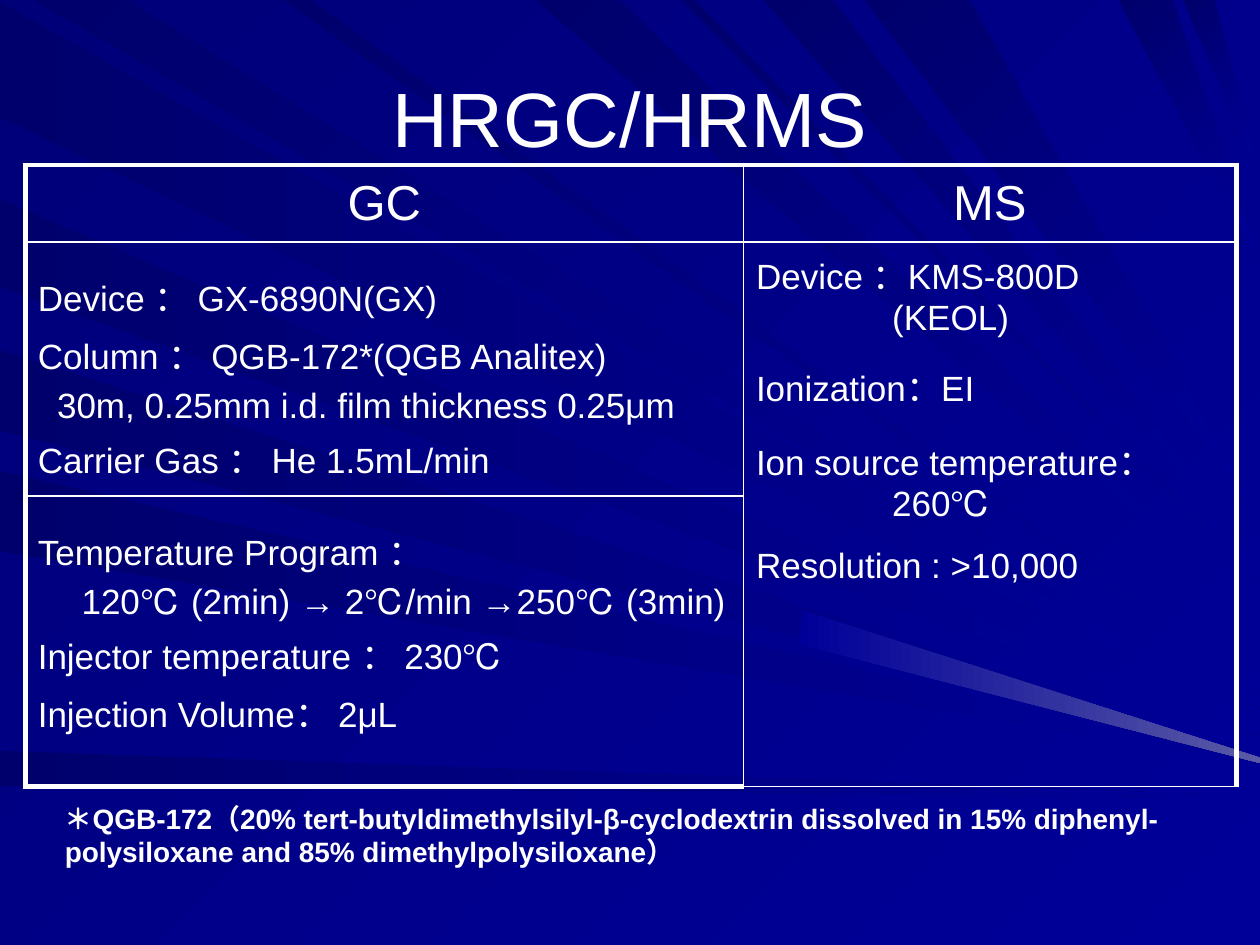
import pptx
import pptx.dml.color
import pptx.enum.text
import pptx.oxml.ns
import pptx.util
from dataclasses import dataclass
from lxml import etree

Pt = pptx.util.Pt
RGB = pptx.dml.color.RGBColor.from_string
ALIGN = pptx.enum.text.PP_ALIGN
ANCHOR = pptx.enum.text.MSO_ANCHOR


@dataclass(frozen=True)
class Theme:
    font: str = "Arial"
    ink: str = "FFFFFF"
    back: tuple = ("000078", "000099")
    ray: tuple = ("00006D", "000099")
    glow: tuple = ("000099", "5A5AA6")
    title: int = 44
    head: int = 28
    body: int = 20
    note: int = 16
    thick: int = 3
    thin: int = 1


T = Theme()

# start and end on the slide's edge, height of the tip on the right edge
TOP_RAYS = [(19, 73, 405), (162, 178, 396), (306, 354, 355), (389, 397, 333),
            (436, 476, 321), (494, 554, 295), (639, 670, 150), (676, 694, 100)]
LEFT_RAYS = [(1, 67, 410), (114, 164, 421), (200, 246, 431), (269, 315, 436),
             (429, 449, 455)]

HANG = {"left": 13.7, "first": -13.7, "before": 4}
SPEC = {"left": 77.8, "first": -77.8, "before": 13}
FLAT = {"before": 4}
OVEN = [
    ("Device ： GX-6890N(GX)", HANG),
    ("Column ： QGB-172*(QGB Analitex)", HANG),
    ("30m, 0.25mm i.d. film thickness 0.25μm", {"left": 11, "before": 4}),
    ("Carrier Gas ： He 1.5mL/min", HANG),
]
PROGRAM = [
    ("Temperature Program ：", FLAT),
    ("120℃ (2min) → 2℃/min →250℃ (3min)", {"left": 25, "before": 4}),
    ("Injector temperature ： 230℃", FLAT),
    ("Injection Volume： 2μL", FLAT),
]
DETECTOR = [
    ("Device ：KMS-800D\v(KEOL)", {**SPEC, "before": 4}),
    ("Ionization：EI", SPEC),
    ("Ion source temperature：260℃", SPEC),
    ("Resolution : >10,000", SPEC),
]


def put(obj, values):
    for name, value in values.items():
        setattr(obj, name, value)


def place(sp, box):
    put(sp, dict(zip(("left", "top", "width", "height"), map(Pt, box))))


def gradient(fill, colours, angle):
    fill.gradient()
    fill.gradient_angle = -angle % 360
    for stop, colour in zip(fill.gradient_stops, colours):
        stop.color.rgb = RGB(colour)


def write(tf, lines, size, align=ALIGN.LEFT, bold=False):
    for i, (text, fmt) in enumerate(lines):
        p = tf.paragraphs[0] if i == 0 else tf.add_paragraph()
        p.text = text
        put(p, {"alignment": align, "space_before": Pt(fmt.get("before", 0))})
        pPr = p._p.get_or_add_pPr()
        pPr.set("marL", str(Pt(fmt.get("left", 0))))
        pPr.set("indent", str(Pt(fmt.get("first", 0))))
        for r in p.runs:
            put(r.font, {"name": T.font, "size": Pt(size), "bold": bold})
            r.font.color.rgb = RGB(T.ink)


def ray(s, box, corners, colours, angle):
    fb = s.shapes.build_freeform(*corners[0], scale=Pt(1))
    fb.add_line_segments(corners[1:], close=True)
    sp = fb.convert_to_shape(Pt(box[0]), Pt(box[1]))
    sp.shadow.inherit = False
    sp.line.fill.background()
    gradient(sp.fill, colours, angle)


def backdrop(s, box):
    right = box[2]
    gradient(s.background.fill, T.back, 45)
    for start, end, tip in LEFT_RAYS:
        ray(s, box, [(0, start), (0, end), (right, tip)], T.ray, 0)
    for start, end, tip in TOP_RAYS:
        ray(s, box, [(start, 0), (end, 0), (right, tip)], T.ray, 45)
    ray(s, box, [(459, 349), (456, 368), (right, 436), (right, 433)], T.glow, 0)


def heading(s, box, text):
    sp = s.shapes.title
    place(sp, box)
    s.shapes._spTree.append(sp._element)
    sp.text_frame.vertical_anchor = ANCHOR.MIDDLE
    write(sp.text_frame, [(text, {})], T.title, ALIGN.CENTER)


def border(cell, widths):
    tcPr = cell._tc.get_or_add_tcPr()
    for i, (side, width) in enumerate(zip("LRTB", widths)):
        ln = etree.Element(pptx.oxml.ns.qn("a:ln" + side), w=str(Pt(width)))
        fill = etree.SubElement(ln, pptx.oxml.ns.qn("a:solidFill"))
        etree.SubElement(fill, pptx.oxml.ns.qn("a:srgbClr"), val=T.ink)
        tcPr.insert(i, ln)


def conditions(s, box, cols, rows):
    tb = s.shapes.add_table(len(rows), len(cols), *map(Pt, box)).table
    put(tb, {"first_row": False, "horz_banding": False})
    for col, width in zip(tb.columns, cols):
        col.width = Pt(width)
    for row, height in zip(tb.rows, rows):
        row.height = Pt(height)
    last_row, last_col = len(rows) - 1, len(cols) - 1
    for r in range(len(rows)):
        for c in range(len(cols)):
            cell = tb.cell(r, c)
            cell.fill.background()
            edges = (c == 0, c == last_col, r == 0, r == last_row)
            border(cell, [T.thick if edge else T.thin for edge in edges])
    tb.cell(1, 1).merge(tb.cell(2, 1))
    for c, text in enumerate(("GC", "MS")):
        tb.cell(0, c).vertical_anchor = ANCHOR.MIDDLE
        write(tb.cell(0, c).text_frame, [(text, FLAT)], T.head, ALIGN.CENTER)
    for r, c, lines, top in ((1, 0, OVEN, 16.6), (2, 0, PROGRAM, 16.6), (1, 1, DETECTOR, 3.6)):
        tb.cell(r, c).margin_top = Pt(top)
        write(tb.cell(r, c).text_frame, lines, T.body)


def footnote(s, box, text):
    tf = s.shapes.add_textbox(*map(Pt, box)).text_frame
    put(tf, {"word_wrap": True, "margin_left": Pt(6), "margin_right": Pt(6),
             "margin_top": Pt(0.7), "margin_bottom": Pt(0.7)})
    write(tf, [(text, {})], T.note, bold=True)


def main():
    prs = pptx.Presentation()
    put(prs, {"slide_width": Pt(720), "slide_height": Pt(540)})
    s = prs.slides.add_slide(prs.slide_layouts[5])
    backdrop(s, (0, 0, 720, 540))
    heading(s, (36, 21.6, 648, 90), "HRGC/HRMS")
    footnote(s, (31, 457.2, 663.5, 41.8),
             "＊QGB-172（20% tert-butyldimethylsilyl-β-cyclodextrin dissolved in 15% "
             "diphenyl-polysiloxane and 85% dimethylpolysiloxane）")
    conditions(s, (14.4, 94.3, 692, 355), (410.4, 281.6), (44, 145, 166))
    prs.save("out.pptx")


if __name__ == "__main__":
    main()
